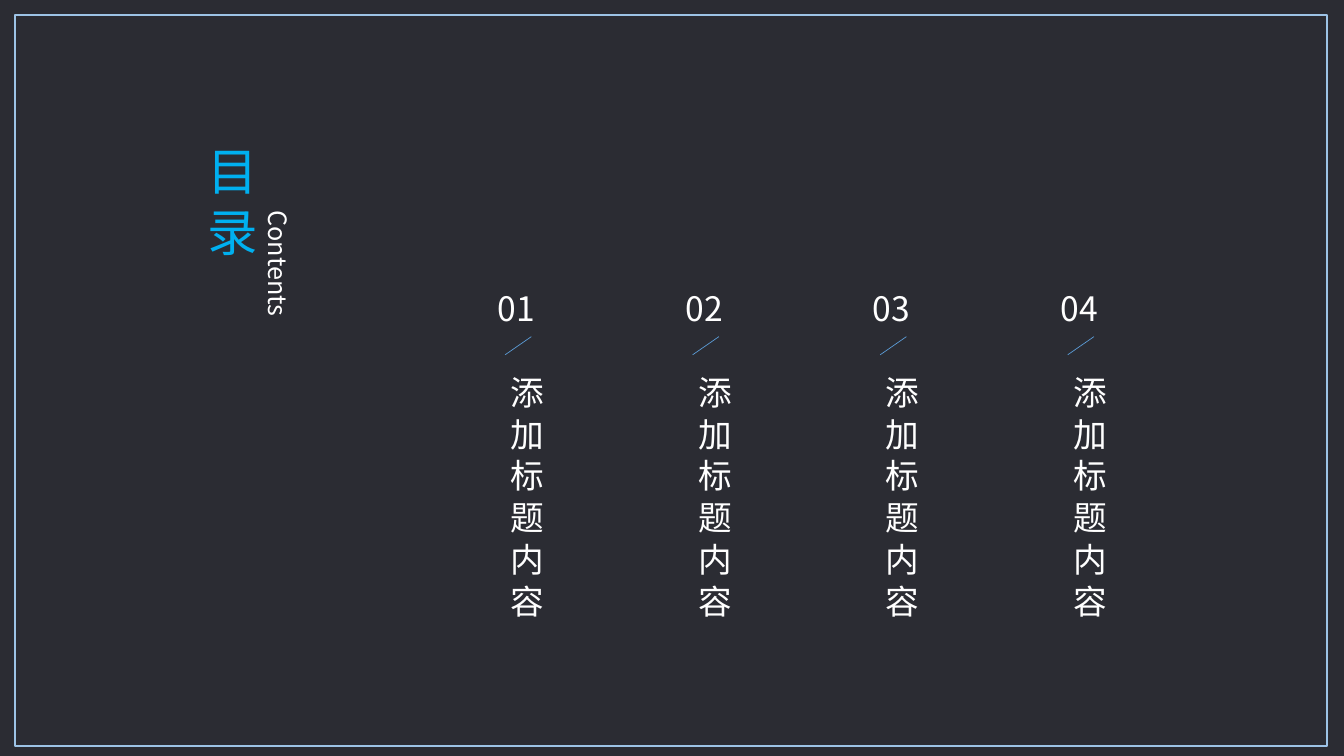
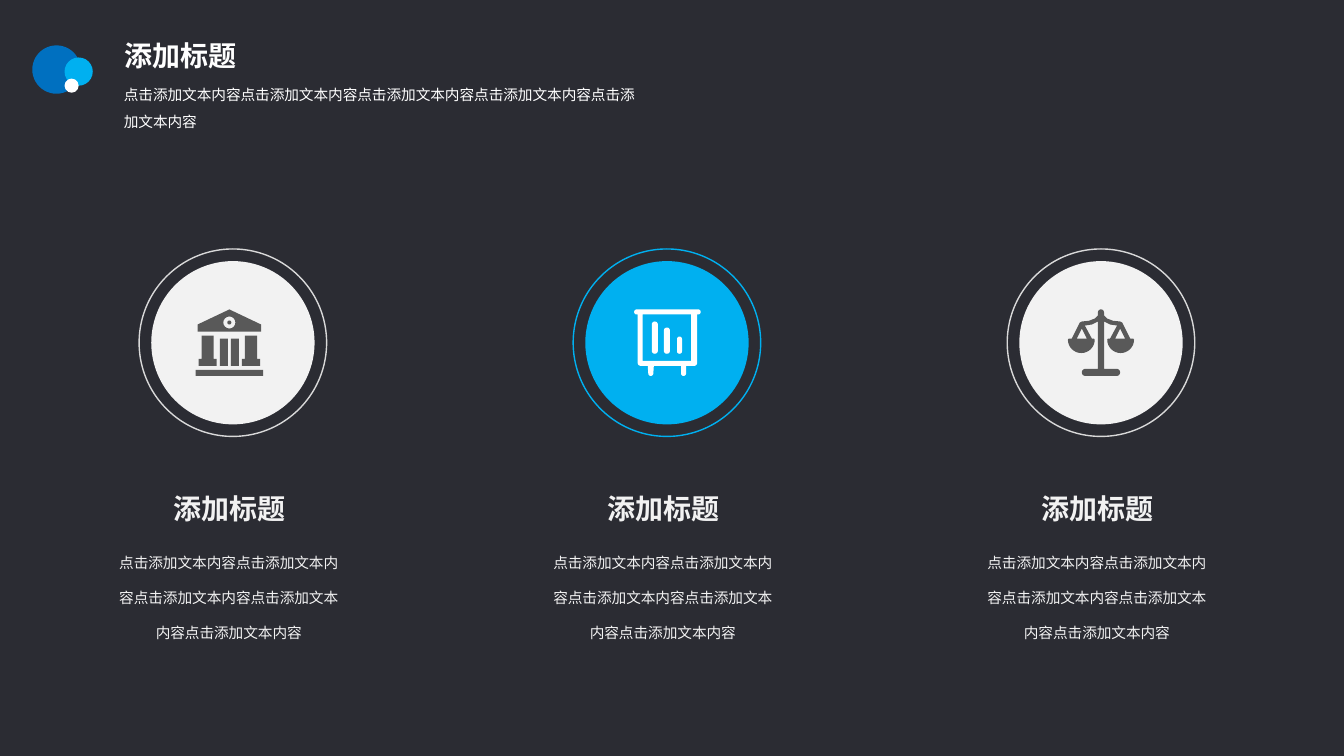
import math
from dataclasses import dataclass

import pptx
import pptx.util
import pptx.dml.color
import pptx.enum.shapes
import pptx.enum.text
import pptx.oxml
import pptx.oxml.ns

Inches = pptx.util.Inches
ALIGN = pptx.enum.text.PP_ALIGN
OUTLINE = pptx.enum.shapes.MSO_SHAPE


@dataclass(frozen=True)
class Theme:
    font: str = "Noto Sans CJK SC"
    background: str = "2B2C33"
    frame: str = "9DC3E6"
    slash: str = "5B9BD5"
    accent: str = "00B0F0"
    deep: str = "0070C0"
    white: str = "FFFFFF"
    pale: str = "F2F2F2"
    ring: str = "D9D9D9"
    icon: str = "595959"
    display: float = 36
    chapter: float = 24
    heading: float = 20
    subtitle: float = 18
    body: float = 10.5


THEME = Theme()


def arc(cx, cy, radius, start, end, steps=16):
    angles = [math.radians(start + (end - start) * i / steps) for i in range(steps + 1)]
    return [(cx + radius * math.cos(a), cy + radius * math.sin(a)) for a in angles]


def box(left, top, right, bottom):
    return [(left, top), (right, top), (right, bottom), (left, bottom)]


def bar(left, top, right, bottom):
    radius = (right - left) / 2
    middle = left + radius
    return arc(middle, top + radius, radius, 180, 360) + arc(middle, bottom - radius, radius, 0, 180)


def pillar(left):
    outline = [(3, 26), (15, 26), (15, 49), (18, 49), (18, 56), (0, 56), (0, 49), (3, 49)]
    return [(left + x, y) for x, y in outline]


def mirror(points, width=66):
    return [(width - x, y) for x, y in reversed(points)]


BANK = [
    box(0, 60, 67, 66), box(24, 29, 32, 56), box(35, 29, 43, 56),
    pillar(3), pillar(46),
    arc(33.5, 13, 2, 0, 360), arc(33.5, 13, 6, 0, 360),
    [(33.5, 0), (65, 15), (65, 22), (2, 22), (2, 15)],
]
BOARD = [
    bar(18, 12, 24, 44), bar(30, 18, 36, 44), bar(43, 27, 48, 44), box(9, 5, 57, 51),
    arc(3, 2.5, 2.5, 90, 270) + arc(64, 2.5, 2.5, -90, 90)
    + [(63, 5)] + arc(60, 53, 3, 0, 90)
    + [(52, 56)] + arc(49.5, 63.5, 2.5, 0, 180)
    + [(47, 56), (20, 56)] + arc(17, 63.5, 2.5, 0, 180)
    + [(14, 56)] + arc(7, 53, 3, 90, 180) + [(4, 5)],
]
SCALE_HALF = (
    arc(33, 3, 3, -90, 0)
    + [(36, 6), (39, 9), (45, 11.3), (52, 12), (54, 13), (62, 29), (65, 29)]
    + arc(52.5, 30, 13.3, 0, 180)
    + [(40, 29), (42, 29), (49, 16), (42, 15), (36, 12), (36, 59)]
    + arc(48.5, 62.5, 3.5, -90, 90)
)
PAN_GAP = [(47, 29), (52, 19), (57, 29)]
SCALES = [SCALE_HALF + mirror(SCALE_HALF), PAN_GAP, mirror(PAN_GAP)]

CONTENTS_TITLE = "目录"
CONTENTS_SUBTITLE = "Contents"
CHAPTERS = [(number, "添 加 标 题 内 容") for number in ("01", "02", "03", "04")]

PAGE_TITLE = "添加标题"
PAGE_INTRO = "点击添加文本内容" * 5
TOPICS = [
    ("添加标题", PAGE_INTRO, BANK, -0.37, THEME.pale, THEME.ring, THEME.icon),
    ("添加标题", PAGE_INTRO, BOARD, -0.33, THEME.accent, THEME.accent, THEME.white),
    ("添加标题", PAGE_INTRO, SCALES, -0.33, THEME.pale, THEME.ring, THEME.icon),
]
BUBBLES = [
    (0.32, 0.45, 0.48, THEME.deep),
    (0.64, 0.57, 0.28, THEME.accent),
    (0.64, 0.78, 0.14, THEME.white),
]


def rgb(code):
    return pptx.dml.color.RGBColor.from_string(code)


def write(holder, text, size, color, align=ALIGN.LEFT, bold=False,
          spacing=None, vertical=False, wrap=True):
    frame = holder.text_frame
    frame.text = text
    frame.word_wrap = wrap
    frame.auto_size = pptx.enum.text.MSO_AUTO_SIZE.SHAPE_TO_FIT_TEXT
    frame.vertical_anchor = pptx.enum.text.MSO_ANCHOR.TOP
    if vertical:
        frame._txBody.bodyPr.set("vert", "eaVert")
    paragraph = frame.paragraphs[0]
    paragraph.alignment = align
    if spacing:
        paragraph.line_spacing = spacing
    run = paragraph.runs[0]
    run.font.size = pptx.util.Pt(size)
    run.font.bold = bold
    run.font.color.rgb = rgb(color)
    run.font.name = THEME.font
    east_asian = pptx.oxml.parse_xml(
        f'<a:ea {pptx.oxml.ns.nsdecls("a")} typeface="{THEME.font}"/>')
    run.font._element.append(east_asian)


def add_text(slide, place, text, size, color, **style):
    holder = slide.shapes.add_textbox(*map(Inches, place))
    write(holder, text, size, color, **style)


def add_title(slide, place, text, size, color, **style):
    title = slide.shapes.title
    title.left, title.top, title.width, title.height = map(Inches, place)
    write(title, text, size, color, **style)


def paint(shape, fill=None, line=None):
    shape.shadow.inherit = False
    if fill:
        shape.fill.solid()
        shape.fill.fore_color.rgb = rgb(fill)
    else:
        shape.fill.background()
    if line:
        shape.line.color.rgb = rgb(line)
        shape.line.width = pptx.util.Pt(1)
    else:
        shape.line.fill.background()


def add_shape(slide, outline, place, **colors):
    paint(slide.shapes.add_shape(outline, *map(Inches, place)), **colors)


def add_disc(slide, cx, cy, diameter, **colors):
    place = (cx - diameter / 2, cy - diameter / 2, diameter, diameter)
    add_shape(slide, OUTLINE.OVAL, place, **colors)


def add_icon(slide, left, top, contours, color):
    builder = None
    for contour in contours:
        points = [(Inches(left + x / 100), Inches(top + y / 100)) for x, y in contour]
        if builder is None:
            builder = slide.shapes.build_freeform(*points[0], scale=1.0)
        else:
            builder.move_to(*points[0])
        builder.add_line_segments(points[1:], close=True)
    paint(builder.convert_to_shape(), fill=color)


def add_slash(slide, left, top):
    slash = slide.shapes.add_connector(
        pptx.enum.shapes.MSO_CONNECTOR.STRAIGHT,
        *map(Inches, (left + 0.26, top, left, top + 0.18)))
    slash.line.color.rgb = rgb(THEME.slash)
    slash.line.width = pptx.util.Pt(0.5)
    slash._element.spPr.append(
        pptx.oxml.parse_xml(f'<a:effectLst {pptx.oxml.ns.nsdecls("a")}/>'))


def build_contents(slide):
    add_shape(slide, OUTLINE.RECTANGLE, (0.15, 0.15, 13.01, 7.25), line=THEME.frame)
    add_title(slide, (1.96, 1.34, 0.61, 1.31), CONTENTS_TITLE,
              THEME.display, THEME.accent, align=ALIGN.CENTER)
    add_text(slide, (2.46, 1.99, 0.5, 1.64), CONTENTS_SUBTITLE,
             THEME.subtitle, THEME.white, vertical=True)
    for index, (number, name) in enumerate(CHAPTERS):
        left = 4.84 + index * 1.86
        add_text(slide, (left, 2.81, 0.6, 0.5), number, THEME.chapter, THEME.white)
        add_slash(slide, left + 0.17, 3.34)
        add_text(slide, (left + 0.02, 3.63, 0.61, 2.69), name,
                 THEME.chapter, THEME.white, vertical=True)


def build_topics(slide):
    for left, top, diameter, color in BUBBLES:
        add_shape(slide, OUTLINE.OVAL, (left, top, diameter, diameter), fill=color)
    add_title(slide, (1.13, 0.33, 1.32, 0.44), PAGE_TITLE,
              THEME.heading, THEME.white, bold=True, wrap=False)
    add_text(slide, (1.13, 0.72, 5.39, 0.6), PAGE_INTRO,
             THEME.body, THEME.white, spacing=1.5)
    for index, (name, detail, icon, shift, fill, ring, ink) in enumerate(TOPICS):
        center = 2.31 + index * 4.305
        add_text(slide, (center - 0.77, 4.83, 1.47, 0.44), name,
                 THEME.heading, THEME.pale, align=ALIGN.CENTER, bold=True)
        add_text(slide, (center - 1.28, 5.27, 2.48, 1.11), detail,
                 THEME.body, THEME.pale, align=ALIGN.CENTER, spacing=2.0)
        add_disc(slide, center, 3.4, 1.62, fill=fill)
        add_disc(slide, center, 3.4, 1.86, line=ring)
        add_icon(slide, center + shift, 3.07, icon, ink)


def main():
    deck = pptx.Presentation()
    deck.slide_width, deck.slide_height = Inches(13.33), Inches(7.5)
    backdrop = deck.slide_master.background.fill
    backdrop.solid()
    backdrop.fore_color.rgb = rgb(THEME.background)
    for build in (build_contents, build_topics):
        build(deck.slides.add_slide(deck.slide_layouts[5]))
    deck.save("out.pptx")


if __name__ == "__main__":
    main()
